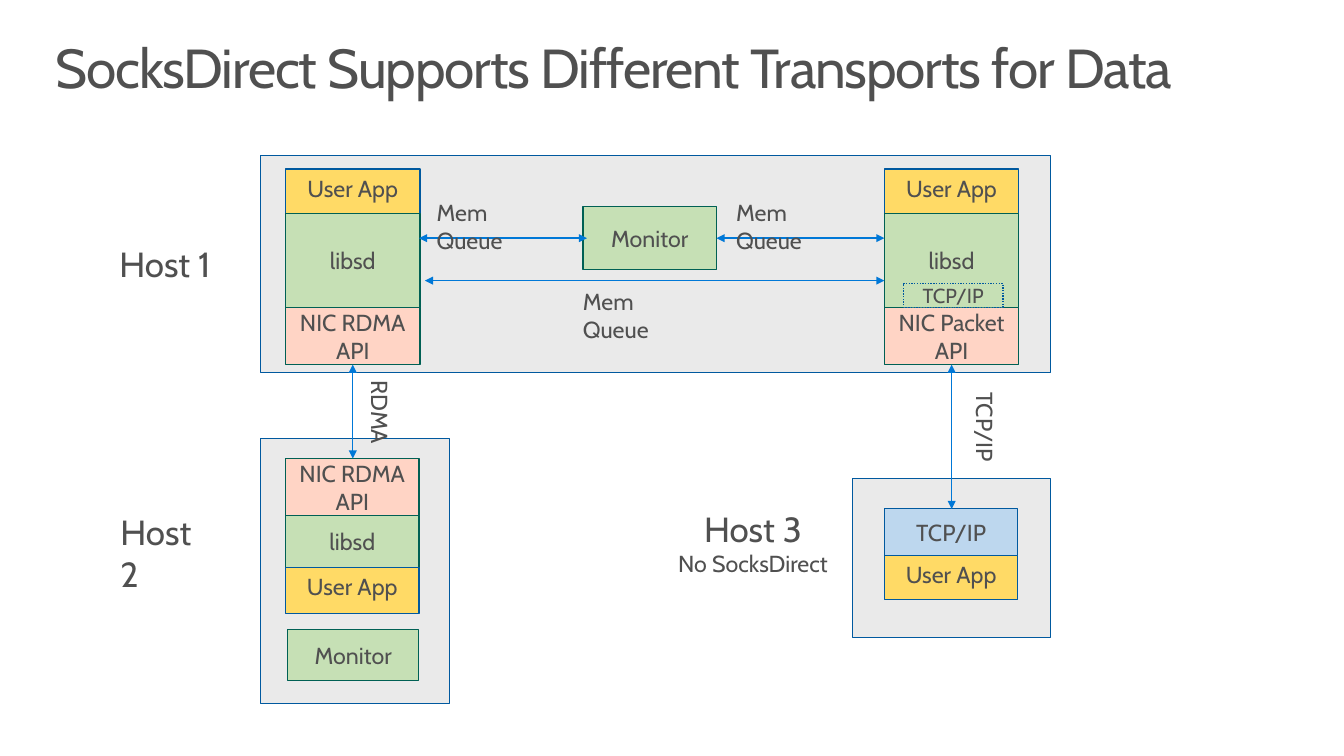
import pptx
import pptx.util
import pptx.dml.color
import pptx.enum.dml
import pptx.enum.shapes
import pptx.enum.text
from lxml import etree
from pptx.oxml.ns import qn

Inches, Pt = pptx.util.Inches, pptx.util.Pt
ALIGN, ANCHOR = pptx.enum.text.PP_ALIGN, pptx.enum.text.MSO_ANCHOR

COLORS = {
    "text": "505050", "arrow": "0078D7", "blue": "00599F", "green": "006054",
    "host": "EAEAEA", "app": "FFDA66", "lib": "C6E0B5", "nic": "FFD4C5", "tcp": "BDD7EE",
}
FONT = "Cabin"
SMALL, BODY, LARGE, HEADING = 14.8, 16.9, 25.4, 40

TITLE = "SocksDirect Supports Different Transports for Data"

# Columns and rows of the diagram, in inches
LEFT, RIGHT, LAYER = 2.89, 8.95, 1.36
LEFT_AXIS, RIGHT_AXIS = LEFT + LAYER / 2, RIGHT + LAYER / 2
HOST_LEFT, HOST_RIGHT = 2.64, 10.63
TOP, NIC_BOTTOM, HOST2_STACK, HOST3_STACK = 1.71, 3.69, 4.64, 5.15
MONITOR_ROW, PEER_ROW = 2.41, 2.84

# left, top, right, bottom
HOSTS = [
    (HOST_LEFT, 4.44, 4.55, 7.12),
    (8.63, 4.84, HOST_RIGHT, 6.45),
    (HOST_LEFT, 1.57, HOST_RIGHT, 3.77),
]

# left, top, width, layers from top to bottom: (kind, label, height)
STACKS = [
    (LEFT, TOP, LAYER,
     [("app", "User App", 0.45), ("lib", "libsd", 0.95), ("nic", "NIC RDMA API", 0.58)]),
    (RIGHT, TOP, LAYER,
     [("app", "User App", 0.45), ("lib", "libsd", 0.95), ("nic", "NIC Packet API", 0.58)]),
    (LEFT, HOST2_STACK, 1.35,
     [("nic", "NIC RDMA API", 0.58), ("lib", "libsd", 0.52), ("app", "User App", 0.47)]),
    (RIGHT, HOST3_STACK, 1.35, [("tcp", "TCP/IP", 0.47), ("app", "User App", 0.45)]),
    (5.9, 2.09, 1.35, [("lib", "Monitor", 0.64)]),
    (2.91, 6.37, 1.33, [("lib", "Monitor", 0.52)]),
]
FALLBACK = ("TCP/IP", (9.14, 2.87, 1.01, 0.24))

# from x, from y, to x, to y
ARROWS = [
    (7.25, MONITOR_ROW, RIGHT, MONITOR_ROW),
    (4.24, MONITOR_ROW, 5.94, MONITOR_ROW),
    (4.3, PEER_ROW, RIGHT, PEER_ROW),
    (RIGHT_AXIS, NIC_BOTTOM, RIGHT_AXIS, HOST3_STACK),
    (LEFT_AXIS, NIC_BOTTOM, LEFT_AXIS, HOST2_STACK),
]

HOST_LABELS = [("Host 1", 1.11, 2.41), ("Host 2", 1.12, 5.12)]
QUEUE_LABELS = [("Mem Queue", 7.35, 1.96), ("Mem Queue", 4.32, 1.96), ("Mem Queue", 5.8, 2.86)]
LINK_LABELS = [("TCP/IP", 9.67, 3.87), ("RDMA", 3.55, 3.75)]


def color(name):
    return pptx.dml.color.RGBColor.from_string(COLORS[name])


def write(para, text, size=BODY, align=ALIGN.LEFT):
    para.alignment = align
    span = para.add_run()
    span.text = text
    span.font.name = FONT
    span.font.size = Pt(size)
    span.font.color.rgb = color("text")
    return span


def add_box(page, area, fill, border, width=0.85):
    box = page.shapes.add_shape(
        pptx.enum.shapes.MSO_SHAPE.RECTANGLE, *map(Inches, area))
    box.shadow.inherit = False
    box.fill.solid()
    box.fill.fore_color.rgb = color(fill)
    box.line.color.rgb = color(border)
    box.line.width = Pt(width)
    return box


def add_stack(page, left, top, width, layers):
    """Place labelled layers directly below one another."""
    for kind, label, height in layers:
        border = "green" if kind in ("lib", "nic") else "blue"
        box = add_box(page, (left, top, width, height), kind, border)
        frame = box.text_frame
        frame.word_wrap = True
        frame.vertical_anchor = ANCHOR.TOP if kind == "app" else ANCHOR.MIDDLE
        write(frame.paragraphs[0], label, align=ALIGN.CENTER)
        top += height


def add_label(page, area, *lines, align=ALIGN.LEFT, vertical=False):
    """Add a text box with one (text, size) pair per paragraph."""
    frame = page.shapes.add_textbox(*map(Inches, area)).text_frame
    frame.word_wrap = not vertical
    if vertical:
        frame._txBody.bodyPr.set("vert", "eaVert")
    for index, (text, size) in enumerate(lines):
        para = frame.add_paragraph() if index else frame.paragraphs[0]
        write(para, text, size, align)


def add_arrow(page, ends):
    arrow = page.shapes.add_connector(
        pptx.enum.shapes.MSO_CONNECTOR.STRAIGHT, *map(Inches, ends))
    arrow.line.color.rgb = color("arrow")
    arrow.line.width = Pt(1)
    line = arrow.line._get_or_add_ln()
    for end in ("a:headEnd", "a:tailEnd"):
        etree.SubElement(line, qn(end), type="triangle")
    etree.SubElement(arrow._element.spPr, qn("a:effectLst"))


def add_title(page):
    title = page.shapes.title
    title.left, title.top, title.width, title.height = map(Inches, (0.4, 0.32, 12.8, 1))
    frame = title.text_frame
    frame.word_wrap = True
    frame.vertical_anchor = ANCHOR.TOP
    frame.margin_left = frame.margin_right = Inches(0.16)
    frame.margin_top = frame.margin_bottom = Inches(0.1)
    para = frame.paragraphs[0]
    para.line_spacing = 0.9
    span = write(para, TITLE, HEADING)
    span.font._element.set("spc", "-80")


def main():
    deck = pptx.Presentation()
    deck.slide_width, deck.slide_height = Inches(13.6), Inches(7.65)
    page = deck.slides.add_slide(deck.slide_layouts[5])
    add_title(page)

    for left, top, right, bottom in HOSTS:
        add_box(page, (left, top, right - left, bottom - top), "host", "blue")
    for stack in STACKS:
        add_stack(page, *stack)

    label, area = FALLBACK
    box = add_box(page, area, "lib", "blue", width=1)
    box.line.dash_style = pptx.enum.dml.MSO_LINE.ROUND_DOT
    frame = box.text_frame
    frame.margin_left = frame.margin_right = frame.margin_top = frame.margin_bottom = 0
    frame.vertical_anchor = ANCHOR.MIDDLE
    write(frame.paragraphs[0], label, SMALL, ALIGN.CENTER)

    for ends in ARROWS:
        add_arrow(page, ends)
    for text, left, top in HOST_LABELS:
        add_label(page, (left, top, 1.13, 0.53), (text, LARGE))
    for text, left, top in QUEUE_LABELS:
        add_label(page, (left, top, 1.41, 0.39), (text, BODY))
    for text, left, top in LINK_LABELS:
        add_label(page, (left, top, 0.49, 0.72), (text, BODY), vertical=True)
    add_label(page, (6.62, 5.09, 2, 0.81), ("Host 3", LARGE), ("No SocksDirect", BODY),
              align=ALIGN.CENTER)

    deck.save("out.pptx")


if __name__ == "__main__":
    main()
